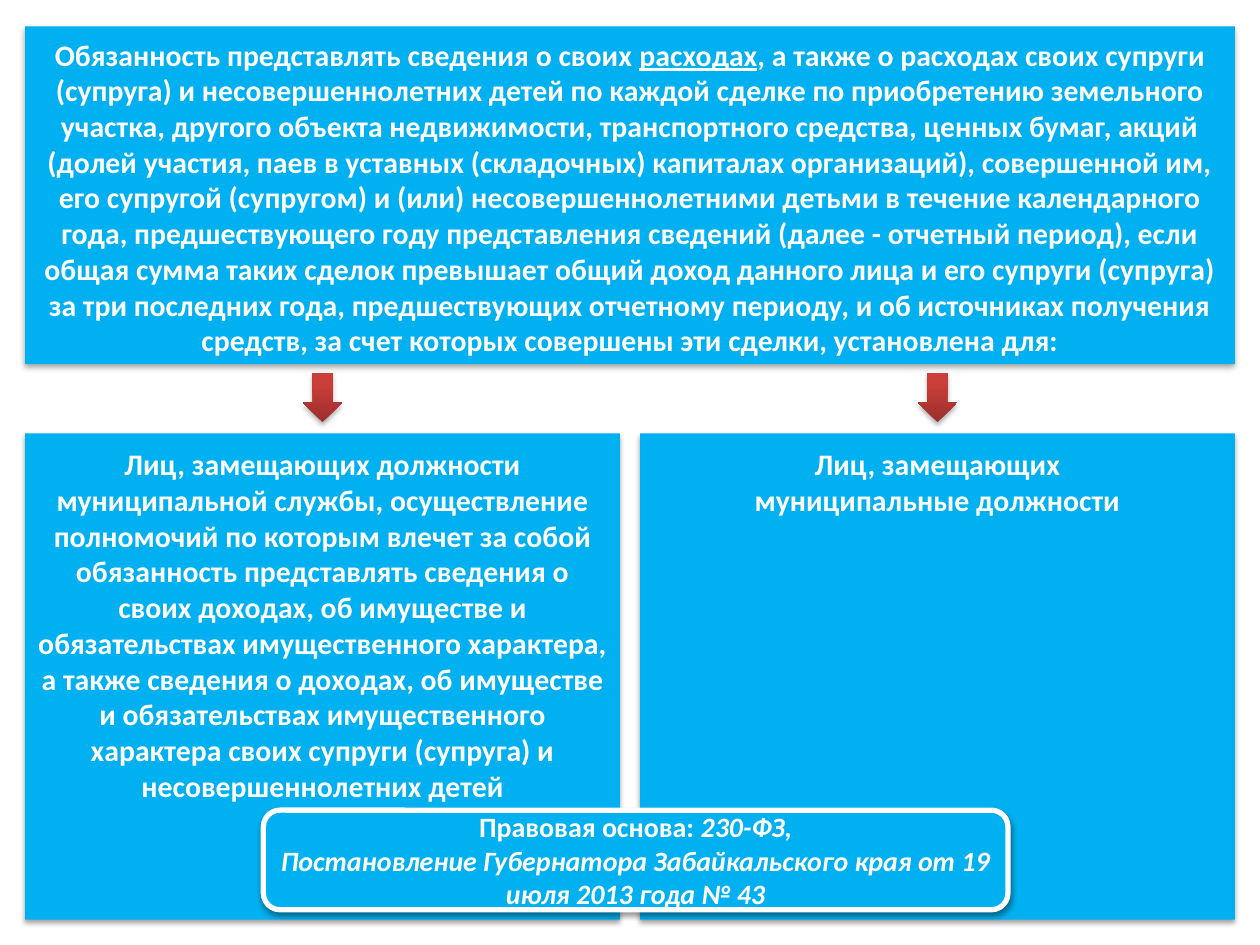
from lxml import etree
from pptx import Presentation
from pptx.dml.color import RGBColor
from pptx.enum.shapes import MSO_SHAPE
from pptx.enum.text import MSO_ANCHOR, MSO_AUTO_SIZE, PP_ALIGN
from pptx.oxml.ns import qn
from pptx.util import Inches, Pt

BLUE = RGBColor(0x00, 0xB0, 0xF0)
WHITE = RGBColor(0xFF, 0xFF, 0xFF)
DARK = RGBColor(0x9C, 0x2F, 0x2D)
RED = RGBColor(0xCB, 0x3E, 0x3A)


def shade(shape, alpha):
    shape.shadow.inherit = False
    effects = shape._element.spPr.find(qn("a:effectLst"))
    outer = etree.SubElement(effects, qn("a:outerShdw"), blurRad=str(Pt(3.1)),
                             dist=str(Pt(1.8)), dir="5400000", rotWithShape="0")
    color = etree.SubElement(outer, qn("a:srgbClr"), val="000000")
    etree.SubElement(color, qn("a:alpha"), val=str(alpha * 1000))


def write(shape, lines, size, anchor):
    shape.fill.solid()
    shape.fill.fore_color.rgb = BLUE
    frame = shape.text_frame
    frame.word_wrap = True
    frame.auto_size = MSO_AUTO_SIZE.NONE
    frame.vertical_anchor = anchor
    for i, line in enumerate(lines):
        para = frame.add_paragraph() if i else frame.paragraphs[0]
        para.alignment = PP_ALIGN.CENTER
        for text, style in line:
            run = para.add_run()
            run.text = text
            run.font.color.rgb = WHITE
            form = {"name": "Calibri", "size": Pt(size), "bold": True, **style}
            for key, value in form.items():
                setattr(run.font, key, value)


prs = Presentation()
prs.slide_width, prs.slide_height = Inches(10), Inches(7.5)
slide = prs.slides.add_slide(prs.slide_layouts[1])
title = slide.shapes.title._element
title.getparent().remove(title)

duty = slide.placeholders[1]
duty.left, duty.top = Inches(0.2), Inches(0.21)
duty.width, duty.height = Inches(9.6), Inches(2.68)
write(duty, [[
    ("Обязанность представлять сведения о своих ", {}),
    ("расходах", {"underline": True}),
    (", а также о расходах своих супруги (супруга) и несовершеннолетних детей "
     "по каждой сделке по приобретению земельного участка, другого объекта "
     "недвижимости, транспортного средства, ценных бумаг, акций (долей участия, "
     "паев в уставных (складочных) капиталах организаций), совершенной им, его "
     "супругой (супругом) и (или) несовершеннолетними детьми в течение "
     "календарного года, предшествующего году представления сведений (далее - "
     "отчетный период), если общая сумма таких сделок превышает общий доход "
     "данного лица и его супруги (супруга) за три последних года, "
     "предшествующих отчетному периоду, и об источниках получения средств, за "
     "счет которых совершены эти сделки, установлена для:", {}),
]], 17, MSO_ANCHOR.BOTTOM)
props = duty.text_frame.paragraphs[0]._p.get_or_add_pPr()
props.set("marL", "0")
props.set("indent", "0")
etree.SubElement(props, qn("a:buNone"))
duty.line.fill.background()
shade(duty, 35)

groups = [
    (0.2, ["Лиц, замещающих должности муниципальной службы, осуществление "
           "полномочий по которым влечет за собой обязанность представлять "
           "сведения о своих доходах, об имуществе и обязательствах "
           "имущественного характера, а также сведения о доходах, об имуществе "
           "и обязательствах имущественного характера своих супруги (супруга) "
           "и несовершеннолетних детей"]),
    (5.08, ["Лиц, замещающих", "муниципальные должности"]),
]
width, thick = 4.72, 0.31
for left, lines in groups:
    box = slide.shapes.add_shape(MSO_SHAPE.RECTANGLE, Inches(left), Inches(3.44),
                                 Inches(width), Inches(3.86))
    write(box, [[(line, {})] for line in lines], 17, MSO_ANCHOR.TOP)
    box.text_frame.margin_top = Inches(0.1)
    box.line.fill.background()
    shade(box, 35)

    arrow = slide.shapes.add_shape(
        MSO_SHAPE.DOWN_ARROW, Inches(left + (width - thick) / 2), Inches(2.96),
        Inches(thick), Inches(0.39))
    arrow.fill.gradient()
    arrow.fill.gradient_angle = 90
    for stop, place, color in zip(arrow.fill.gradient_stops, (0, 0.8), (DARK, RED)):
        stop.position = place
        stop.color.rgb = color
    arrow.line.fill.background()
    shade(arrow, 35)

basis = slide.shapes.add_shape(MSO_SHAPE.ROUNDED_RECTANGLE, Inches(2.09),
                               Inches(6.43), Inches(5.91), Inches(0.79))
write(basis, [
    [("Правовая основа: ", {}), ("230-ФЗ,", {"italic": True})],
    [("Постановление Губернатора Забайкальского края от 19 июля 2013 года № 43",
      {"italic": True})],
], 16, MSO_ANCHOR.MIDDLE)
basis.line.color.rgb = WHITE
basis.line.width = Pt(3)
shade(basis, 38)

prs.save("out.pptx")
